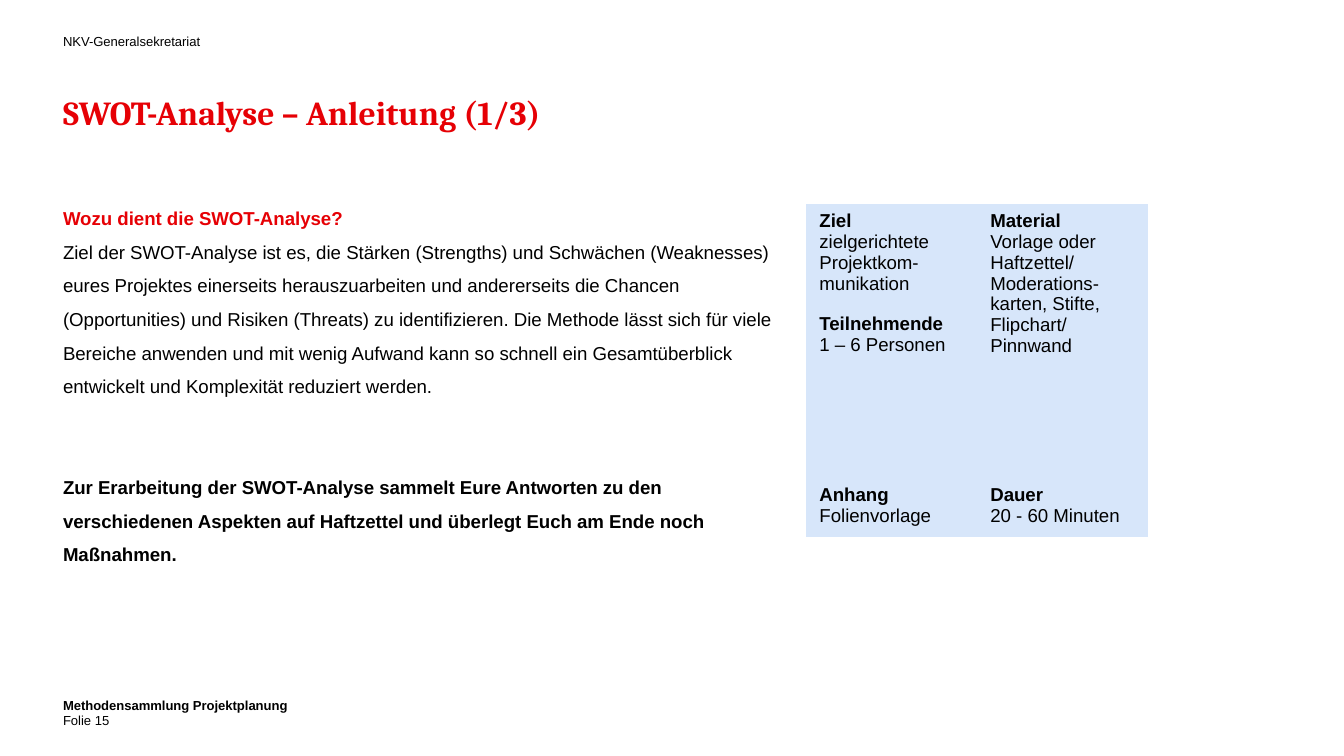
from pptx import Presentation
from pptx.dml.color import RGBColor
from pptx.enum.text import MSO_ANCHOR
from pptx.util import Emu, Pt

PX = 914400 / 134.4
TOP = MSO_ANCHOR.TOP
NO_GRID_STYLE = "{2D5ABB26-0587-4C30-8999-92F81FD0307C}"
COLORS = {"red": "E60005", "black": "000000", "panel": "D7E6FA"}

# Text formats: font values, colour and exact line height in points
SMALL = {"name": "Arial", "size": 7, "bold": False, "color": "black", "line": 9}
SMALL_BOLD = {**SMALL, "bold": True}
TITLE = {"name": "Cambria", "size": 18, "bold": True, "color": "red", "line": 24}
BODY = {"name": "Arial", "size": 10, "bold": False, "color": "black", "line": 18}
HEADING = {**BODY, "bold": True, "color": "red"}
TASK = {**BODY, "bold": True, "before": 36}
CELL = {"name": "Arial", "size": 10, "bold": False, "color": "black"}
CELL_HEAD = {**CELL, "bold": True}

PURPOSE = (
    "Ziel der SWOT-Analyse ist es, die Stärken (Strengths) und Schwächen (Weaknesses)\n"
    "eures Projektes einerseits herauszuarbeiten und andererseits die Chancen "
    "(Opportunities) und Risiken (Threats) zu identifizieren. Die Methode lässt sich "
    "für viele Bereiche anwenden und mit wenig Aufwand kann so schnell ein "
    "Gesamtüberblick entwickelt und Komplexität reduziert werden."
)
INSTRUCTION = (
    "Zur Erarbeitung der SWOT-Analyse sammelt Eure Antworten zu den verschiedenen "
    "Aspekten auf Haftzettel und überlegt Euch am Ende noch Maßnahmen."
)

# Box position and size in px, then its paragraphs
BOXES = [
    ((63, 32, 241, 17), [("NKV-Generalsekretariat", SMALL)]),
    ((63, 87, 1085, 45), [("SWOT-Analyse – Anleitung (1/3)", TITLE)]),
    ((63, 196, 727, 478), [("Wozu dient die SWOT-Analyse?", HEADING),
                           (PURPOSE, BODY), (INSTRUCTION, TASK)]),
    ((63, 696, 1218, 16), [("Methodensammlung Projektplanung", SMALL_BOLD)]),
    ((63, 711, 32, 17), [("Folie", SMALL)]),
    ((95, 711, 302, 17), [("15", SMALL)]),
]

# Fact table: row and column, heading, lines
FACTS = [
    (0, 0, "Ziel", ["zielgerichtete Projektkom-munikation"]),
    (0, 1, "Material", ["Vorlage oder Haftzettel/",
                        "Moderations-karten, Stifte, Flipchart/", "Pinnwand"]),
    (1, 0, "Teilnehmende", ["1 – 6 Personen"]),
    (2, 0, "Anhang", ["Folienvorlage"]),
    (2, 1, "Dauer", ["20 - 60 Minuten"]),
]
COLUMN_WIDTH = 171
ROW_HEIGHTS = [97, 159, 59]


def px(length):
    return Emu(round(length * PX))


def write(frame, paragraphs):
    """Fill a text frame with (text, format) pairs."""
    for index, (text, style) in enumerate(paragraphs):
        para = frame.add_paragraph() if index else frame.paragraphs[0]
        para.text = text
        para.space_before = Pt(style.get("before", 0))
        if "line" in style:
            para.line_spacing = Pt(style["line"])
        for span in para.runs:
            for key in ("name", "bold"):
                setattr(span.font, key, style[key])
            span.font.size = Pt(style["size"])
            span.font.color.rgb = RGBColor.from_string(COLORS[style["color"]])


def add_text(page, place, paragraphs):
    frame = page.shapes.add_textbox(*map(px, place)).text_frame
    settings = {"word_wrap": True, "vertical_anchor": TOP, "margin_left": 0,
                "margin_right": 0, "margin_top": 0, "margin_bottom": 0}
    for key, value in settings.items():
        setattr(frame, key, value)
    write(frame, paragraphs)


def add_fact_table(page, left, top):
    width, height = 2 * COLUMN_WIDTH, sum(ROW_HEIGHTS)
    graphic = page.shapes.add_table(3, 2, *map(px, (left, top, width, height)))
    table = graphic.table
    table.first_row = table.horz_banding = False
    graphic._element.graphic.graphicData.tbl.tblPr[0].text = NO_GRID_STYLE

    for column in table.columns:
        column.width = px(COLUMN_WIDTH)
    for row, row_height in zip(table.rows, ROW_HEIGHTS):
        row.height = px(row_height)
    table.cell(0, 1).merge(table.cell(1, 1))

    for cell in table.iter_cells():
        cell.fill.solid()
        cell.fill.fore_color.rgb = RGBColor.from_string(COLORS["panel"])
    for row, column, heading, lines in FACTS:
        paragraphs = [(heading, CELL_HEAD)] + [(line, CELL) for line in lines]
        write(table.cell(row, column).text_frame, paragraphs)


def main():
    deck = Presentation()
    deck.slide_width, deck.slide_height = px(1344), px(756)
    page = deck.slides.add_slide(deck.slide_layouts[6])

    # Header, title, body and footer
    for place, paragraphs in BOXES:
        add_text(page, place, paragraphs)

    # Fact panel
    add_fact_table(page, 806, 204)
    deck.save("out.pptx")


if __name__ == "__main__":
    main()
